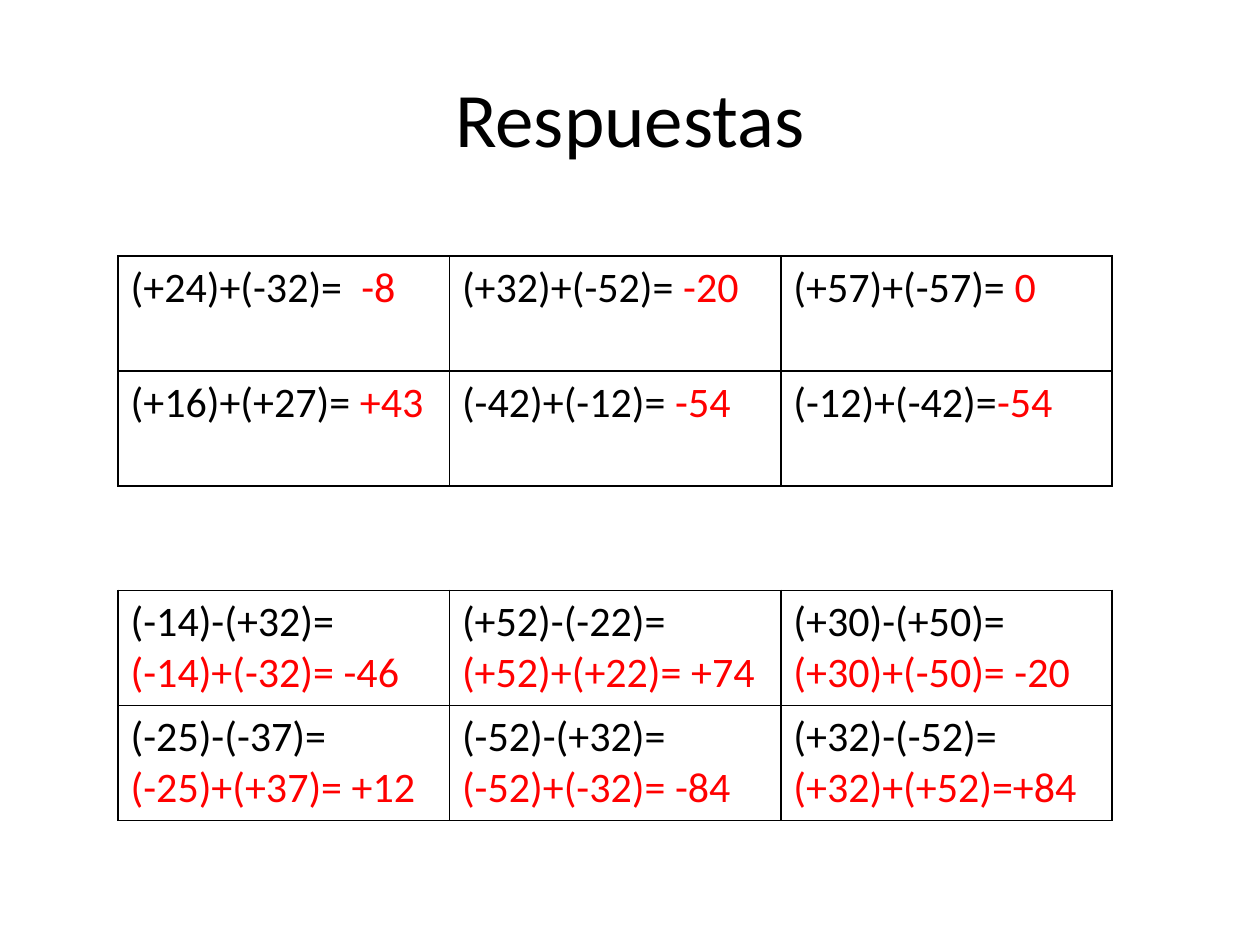
from lxml import etree
from pptx import Presentation
from pptx.dml.color import RGBColor
from pptx.enum import text
from pptx.oxml import ns
from pptx.util import Cm, Pt

# Content: each cell is (operation, answer)
TITLE = "Respuestas"
SUMS = [
    [("(+24)+(-32)=  ", "-8"), ("(+32)+(-52)=", " -20"), ("(+57)+(-57)= ", "0")],
    [("(+16)+(+27)= ", "+43"), ("(-42)+(-12)= ", "-54"), ("(-12)+(-42)=", "-54")],
]
SUBTRACTIONS = [
    [("(-14)-(+32)=", "(-14)+(-32)= -46"),
     ("(+52)-(-22)=", "(+52)+(+22)= +74"),
     ("(+30)-(+50)=", "(+30)+(-50)= -20")],
    [("(-25)-(-37)=", "(-25)+(+37)= +12"),
     ("(-52)-(+32)=", "(-52)+(-32)= -84"),
     ("(+32)-(-52)=", "(+32)+(+52)=+84")],
]
# (exercises, top in cm, answer on its own line)
EXERCISE_TABLES = [(SUMS, 5.16, False), (SUBTRACTIONS, 11.9, True)]

BLACK, RED = "000000", "FF0000"
TABLE_LEFT, COLUMN_WIDTH, ROW_HEIGHT = 2.38, 6.68, 2.32


def style(run, size, color):
    run.font.name = "Calibri"
    run.font.size = Pt(size)
    run.font.bold = False
    run.font.color.rgb = RGBColor.from_string(color)


def add_borders(cell, color=BLACK, width=1):
    properties = cell._tc.get_or_add_tcPr()
    for side in ("a:lnL", "a:lnR", "a:lnT", "a:lnB"):
        line = etree.SubElement(properties, ns.qn(side), w=str(Pt(width)))
        fill = etree.SubElement(line, ns.qn("a:solidFill"))
        etree.SubElement(fill, ns.qn("a:srgbClr"), val=color)


def fill_cell(cell, operation, answer, own_line):
    add_borders(cell)
    cell.fill.background()
    first = cell.text_frame.paragraphs[0]
    last = cell.text_frame.add_paragraph() if own_line else first
    for paragraph, wording, color in ((first, operation, BLACK), (last, answer, RED)):
        run = paragraph.add_run()
        run.text = wording
        style(run, 24, color)


def add_exercises(slide, exercises, top, own_line):
    rows, columns = len(exercises), len(exercises[0])
    table = slide.shapes.add_table(
        rows, columns, Cm(TABLE_LEFT), Cm(top),
        Cm(COLUMN_WIDTH * columns), Cm(ROW_HEIGHT * rows)).table
    table.first_row = table.horz_banding = False
    for r, row in enumerate(exercises):
        for c, (operation, answer) in enumerate(row):
            fill_cell(table.cell(r, c), operation, answer, own_line)


def main():
    prs = Presentation()
    prs.slide_width, prs.slide_height = Cm(25.4), Cm(19.05)
    slide = prs.slides.add_slide(prs.slide_layouts[5])

    # Title
    title = slide.shapes.title
    title.left, title.top, title.width, title.height = Cm(1.27), Cm(0.76), Cm(22.86), Cm(3.18)
    title.text_frame.text = TITLE
    title.text_frame.vertical_anchor = text.MSO_ANCHOR.MIDDLE
    heading = title.text_frame.paragraphs[0]
    heading.alignment = text.PP_ALIGN.CENTER
    style(heading.runs[0], 44, BLACK)

    # Answer tables
    for exercises, top, own_line in EXERCISE_TABLES:
        add_exercises(slide, exercises, top, own_line)

    prs.save("out.pptx")


if __name__ == "__main__":
    main()
